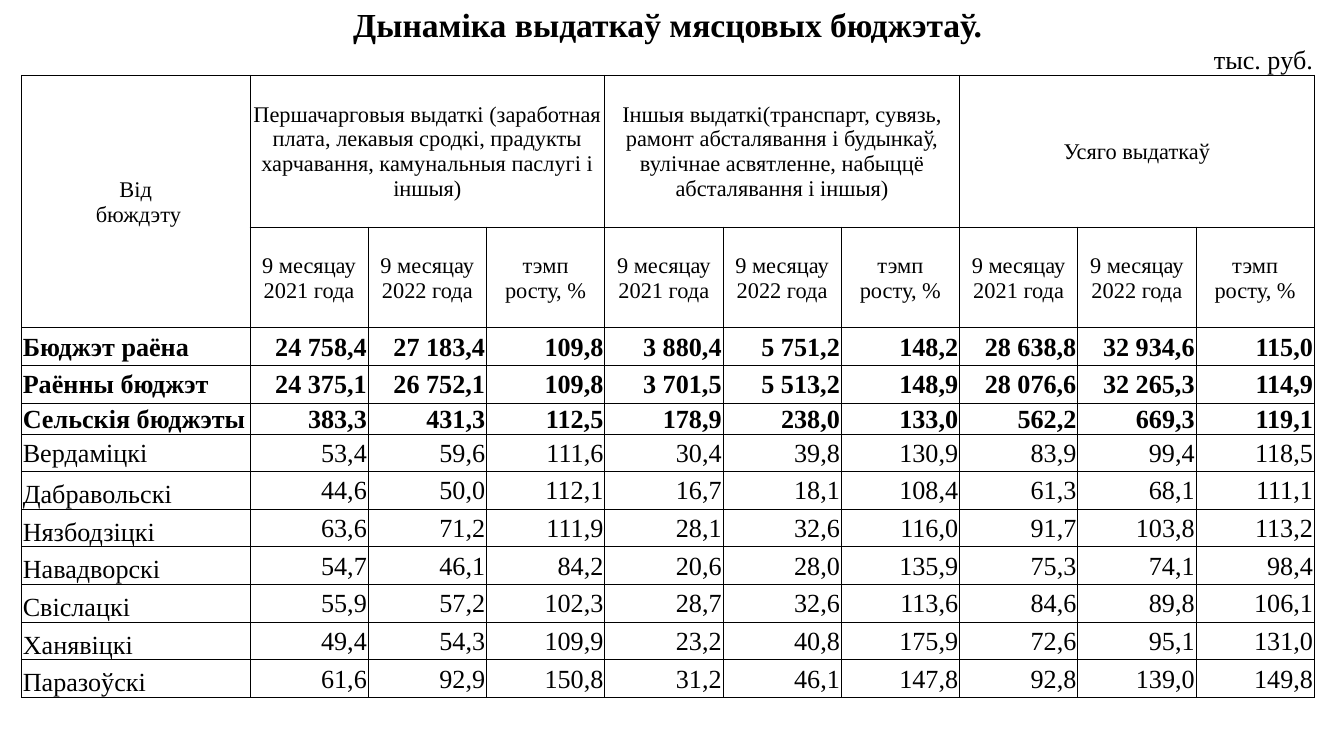
from pptx import Presentation
from pptx.dml.color import RGBColor
from pptx.enum.text import MSO_ANCHOR as ANCHOR, PP_ALIGN as ALIGN
from pptx.oxml.ns import qn
from pptx.util import Inches, Pt
from lxml.etree import SubElement

COLORS = {"ink": "000000"}
FONT = "Times New Roman"
GRID_PT = 0.5
HEADER_ROWS = 4
COL_WIDTHS = [1.7] + [0.88] * 9
ROW_HEIGHTS = [0.3, 0.23, 1.13, 0.75, 0.28, 0.28, 0.23] + [0.28] * 7
GROUPS = [
    "Першачарговыя выдаткі (заработная плата, лекавыя сродкі, прадукты харчавання, камунальныя паслугі і іншыя)",
    "Іншыя выдаткі(транспарт, сувязь, рамонт абсталявання і будынкаў, вулічнае асвятленне, набыццё абсталявання і іншыя)",
    "Усяго выдаткаў",
]
PERIODS = ["9 месяцау 2021 года", "9 месяцау 2022 года", "тэмп\nросту, %"]
HEADINGS = ["9 месяцау\n2021 года"] + (PERIODS * len(GROUPS))[1:]
BUDGETS = [
    ["Бюджэт раёна", "24 758,4", "27 183,4", "109,8", "3 880,4", "5 751,2", "148,2", "28 638,8", "32 934,6", "115,0"],
    ["Раённы бюджэт", "24 375,1", "26 752,1", "109,8", "3 701,5", "5 513,2", "148,9", "28 076,6", "32 265,3", "114,9"],
    ["Сельскія бюджэты", "383,3", "431,3", "112,5", "178,9", "238,0", "133,0", "562,2", "669,3", "119,1"],
    ["Вердаміцкі", "53,4", "59,6", "111,6", "30,4", "39,8", "130,9", "83,9", "99,4", "118,5"],
    ["Дабравольскі", "44,6", "50,0", "112,1", "16,7", "18,1", "108,4", "61,3", "68,1", "111,1"],
    ["Нязбодзіцкі", "63,6", "71,2", "111,9", "28,1", "32,6", "116,0", "91,7", "103,8", "113,2"],
    ["Навадворскі", "54,7", "46,1", "84,2", "20,6", "28,0", "135,9", "75,3", "74,1", "98,4"],
    ["Свіслацкі", "55,9", "57,2", "102,3", "28,7", "32,6", "113,6", "84,6", "89,8", "106,1"],
    ["Ханявіцкі", "49,4", "54,3", "109,9", "23,2", "40,8", "175,9", "72,6", "95,1", "131,0"],
    ["Паразоўскі", "61,6", "92,9", "150,8", "31,2", "46,1", "147,8", "92,8", "139,0", "149,8"],
]


def set_borders(cell, sides):
    tcPr = cell._tc.get_or_add_tcPr()
    for side in "LRTB":
        width = Pt(GRID_PT) if side in sides else 0
        ln = SubElement(tcPr, qn(f"a:ln{side}"), w=str(int(width)))
        if side in sides:
            fill = SubElement(ln, qn("a:solidFill"))
            SubElement(fill, qn("a:srgbClr"), val=COLORS["ink"])
        else:
            SubElement(ln, qn("a:noFill"))


def write_cell(cell, text, size, align, anchor=ANCHOR.MIDDLE, bold=False):
    cell.text = text
    cell.vertical_anchor = anchor
    for p in cell.text_frame.paragraphs:
        p.alignment = align
        for r in p.runs:
            style = {"name": FONT, "size": Pt(size), "bold": bold}
            for name, value in style.items():
                setattr(r.font, name, value)
            r.font.color.rgb = RGBColor.from_string(COLORS["ink"])


prs = Presentation()
prs.slide_width = Inches(10)
prs.slide_height = Inches(10) * 9 // 16
s = prs.slides.add_slide(prs.slide_layouts[6])

frame = s.shapes.add_table(
    len(ROW_HEIGHTS), len(COL_WIDTHS), Inches(0.16), Inches(0.03),
    Inches(sum(COL_WIDTHS)), Inches(sum(ROW_HEIGHTS)))
table = frame.table
table.first_row = table.horz_banding = False
for column, width in zip(table.columns, COL_WIDTHS):
    column.width = Inches(width)
for row, height in zip(table.rows, ROW_HEIGHTS):
    row.height = Inches(height)

margins = {"margin_left": 0.01, "margin_right": 0.01, "margin_top": 0.01, "margin_bottom": 0}
for i, row in enumerate(table.rows):
    for cell in row.cells:
        for name, value in margins.items():
            setattr(cell, name, Inches(value))
        set_borders(cell, {0: "", 1: "B"}.get(i, "LRTB"))
        cell.fill.background()
        cell.text_frame.paragraphs[0]._p.get_or_add_endParaRPr().set("sz", "1000")

table.cell(0, 0).merge(table.cell(0, 9))
for col in (1, 3, 5):
    table.cell(1, col).merge(table.cell(1, col + 1))
table.cell(2, 0).merge(table.cell(3, 0))

write_cell(table.cell(0, 0), "Дынаміка выдаткаў мясцовых бюджэтаў.", 18, ALIGN.CENTER, ANCHOR.BOTTOM, True)
write_cell(table.cell(1, 9), "тыс. руб.", 14, ALIGN.RIGHT, ANCHOR.BOTTOM)
write_cell(table.cell(2, 0), "Від\n бюждэту", 12, ALIGN.CENTER)
for g, group in enumerate(GROUPS):
    first = 1 + g * len(PERIODS)
    table.cell(2, first).merge(table.cell(2, first + len(PERIODS) - 1))
    write_cell(table.cell(2, first), group, 12, ALIGN.CENTER)
for col, heading in enumerate(HEADINGS, 1):
    write_cell(table.cell(3, col), heading, 12, ALIGN.CENTER)

for i, (budget, *values) in enumerate(BUDGETS):
    row = HEADER_ROWS + i
    bold = i < 3
    anchor = ANCHOR.BOTTOM if i > 3 else ANCHOR.MIDDLE
    write_cell(table.cell(row, 0), budget, 14, ALIGN.LEFT, anchor, bold)
    for col, value in enumerate(values, 1):
        write_cell(table.cell(row, col), value, 14, ALIGN.RIGHT, bold=bold)

prs.save("out.pptx")
